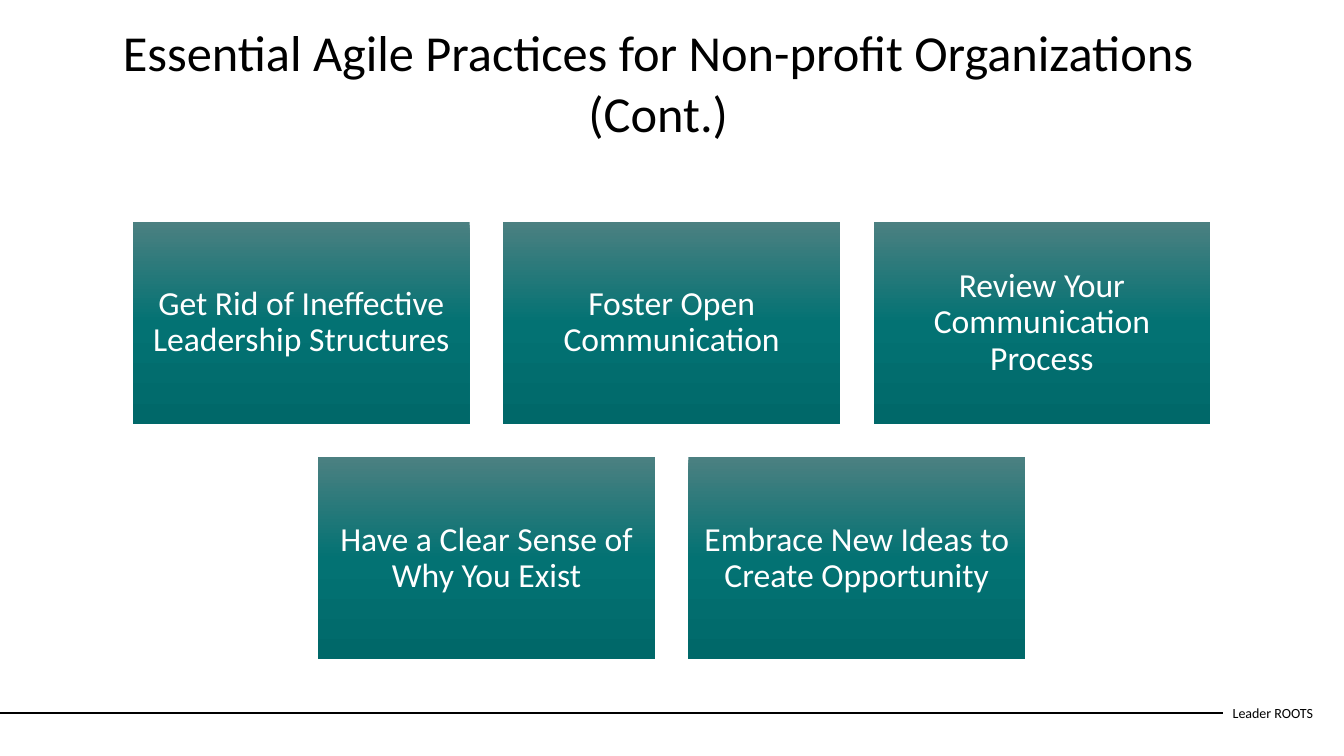
from copy import deepcopy

from pptx import Presentation
from pptx.dml.color import RGBColor
from pptx.enum.shapes import MSO_CONNECTOR, MSO_SHAPE
from pptx.enum.text import MSO_ANCHOR, MSO_AUTO_SIZE, PP_ALIGN
from pptx.oxml.ns import qn
from pptx.oxml.xmlchemy import OxmlElement
from pptx.util import Pt

BLACK = RGBColor(0x00, 0x00, 0x00)
WHITE = RGBColor(0xFF, 0xFF, 0xFF)
TEAL_STOPS = [
    (0, RGBColor(0x4B, 0x80, 0x81)),
    (0.5, RGBColor(0x03, 0x72, 0x73)),
    (1, RGBColor(0x00, 0x68, 0x69)),
]
FONT = "Calibri"
STRAIGHT = MSO_CONNECTOR.STRAIGHT
RECTANGLE = MSO_SHAPE.RECTANGLE
TOP, MIDDLE = MSO_ANCHOR.TOP, MSO_ANCHOR.MIDDLE
CENTER, LEFT = PP_ALIGN.CENTER, PP_ALIGN.LEFT
NO_AUTOFIT = MSO_AUTO_SIZE.NONE

PRACTICE_ROWS = [
    [
        "Get Rid of Ineffective Leadership Structures",
        "Foster Open Communication",
        "Review Your Communication Process",
    ],
    [
        "Have a Clear Sense of Why You Exist",
        "Embrace New Ideas to Create Opportunity",
    ],
]


def write(frame, text, size, color, align, anchor):
    """Fill a text frame with one formatted paragraph."""
    frame.text = text
    frame.word_wrap = True
    frame.auto_size = NO_AUTOFIT
    frame.vertical_anchor = anchor
    paragraph = frame.paragraphs[0]
    paragraph.alignment = align
    font = paragraph.runs[0].font
    font.name, font.size, font.color.rgb = FONT, Pt(size), color


def add_title(slide, left, top, width, height):
    """Place the slide title in the given box."""
    title = slide.shapes.title
    title.left, title.top = Pt(left), Pt(top)
    title.width, title.height = Pt(width), Pt(height)
    write(title.text_frame,
          "Essential Agile Practices for Non-profit Organizations (Cont.)",
          36, BLACK, CENTER, TOP)


def fill_teal(tile):
    """Give a tile the top-to-bottom teal gradient."""
    tile.fill.gradient()
    tile.fill.gradient_angle = 270
    first_stop = tile._element.spPr.find(".//" + qn("a:gs"))
    first_stop.addnext(deepcopy(first_stop))
    for stop, (position, color) in zip(tile.fill.gradient_stops, TEAL_STOPS):
        stop.position = position
        stop.color.rgb = color


def add_practice(slide, practice, left, top, width, height):
    """Draw one practice tile in the given box."""
    tile = slide.shapes.add_shape(RECTANGLE, Pt(left), Pt(top), Pt(width), Pt(height))
    tile.shadow.inherit = False
    tile.line.fill.background()
    fill_teal(tile)
    frame = tile.text_frame
    write(frame, practice, 24, WHITE, CENTER, MIDDLE)
    frame.margin_left = frame.margin_right = Pt(7.2)
    frame.margin_top = frame.margin_bottom = Pt(7.2)
    frame.paragraphs[0].line_spacing = 0.9


def add_practice_grid(slide, left, top, width, height, gap=24):
    """Lay out the practice rows, each centred in the given box."""
    columns = max(len(row) for row in PRACTICE_ROWS)
    tile_width = (width + gap) / columns - gap
    tile_height = (height + gap) / len(PRACTICE_ROWS) - gap
    for row_index, row in enumerate(PRACTICE_ROWS):
        indent = (columns - len(row)) * (tile_width + gap) / 2
        for column, practice in enumerate(row):
            add_practice(slide, practice,
                         left + indent + column * (tile_width + gap),
                         top + row_index * (tile_height + gap),
                         tile_width, tile_height)


def add_footer(slide, left, top, width, height, name_width=73):
    """Draw the footer rule and the organization name at its right end."""
    name_left = left + width - name_width
    middle = top + height / 2
    organization = slide.shapes.add_textbox(
        Pt(name_left), Pt(top), Pt(name_width), Pt(height))
    write(organization.text_frame, "Leader ROOTS", 10, BLACK, LEFT, MIDDLE)
    rule = slide.shapes.add_connector(
        STRAIGHT, Pt(left), Pt(middle), Pt(name_left), Pt(middle))
    rule.end_connect(organization, 1)
    rule.line.color.rgb = BLACK
    rule.line.width = Pt(1.5)
    rule._element.spPr.append(OxmlElement("a:effectLst"))


def main():
    """Build and save the slide."""
    presentation = Presentation()
    presentation.slide_width, presentation.slide_height = Pt(960), Pt(540)
    slide = presentation.slides.add_slide(presentation.slide_layouts[5])
    add_footer(slide, 0, 494.6, 946.4, 28.8)
    add_practice_grid(slide, 95, 158.5, 769.5, 312.5)
    add_title(slide, 27.4, 11.5, 885.6, 94.5)
    presentation.save("out.pptx")


if __name__ == "__main__":
    main()
